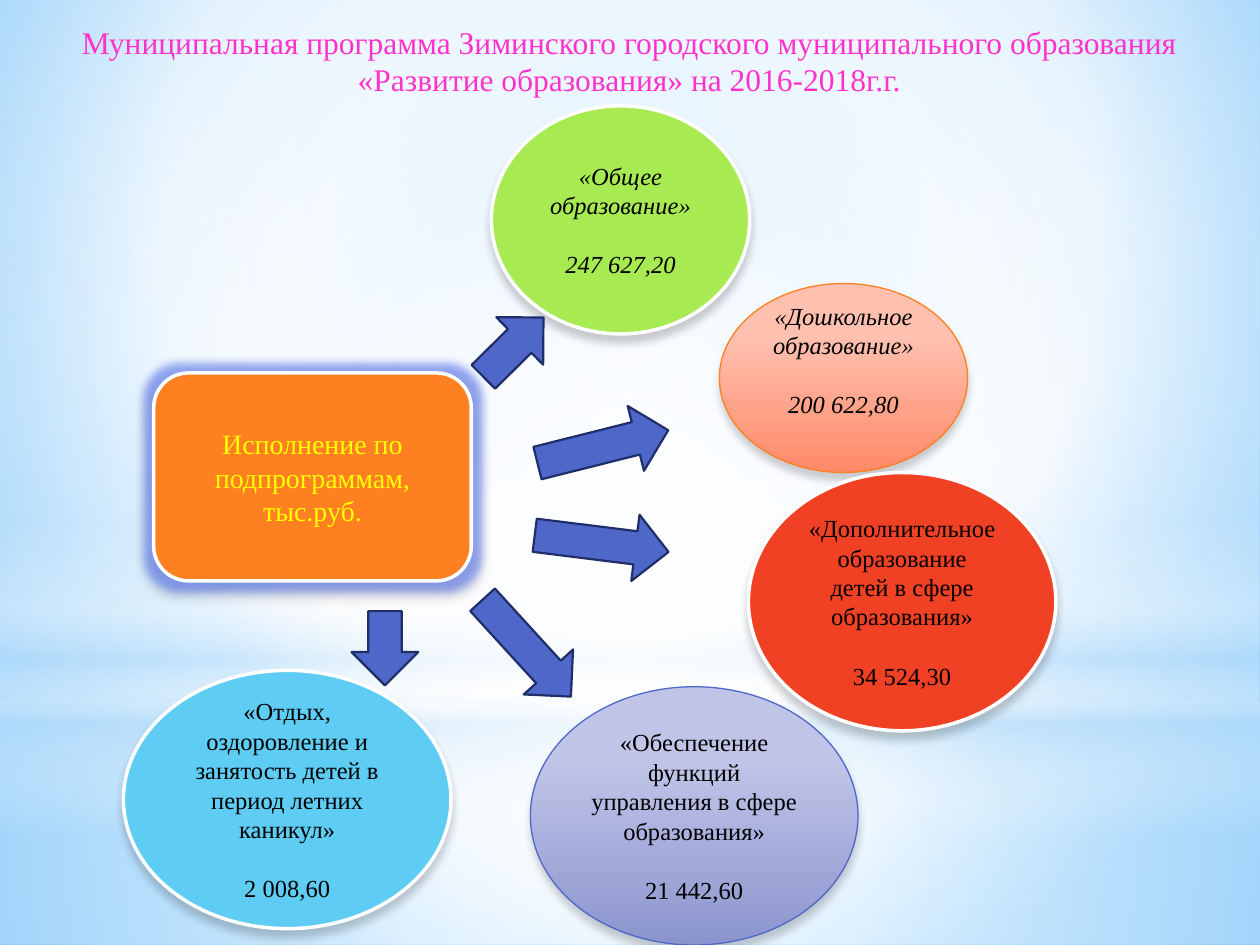
import pptx
import pptx.util
import pptx.dml.color
import pptx.enum.shapes
import pptx.enum.text
import pptx.oxml
import pptx.oxml.ns

Inches, Pt = pptx.util.Inches, pptx.util.Pt
SHAPE = pptx.enum.shapes.MSO_SHAPE
ALIGN = pptx.enum.text.PP_ALIGN
ANCHOR = pptx.enum.text.MSO_ANCHOR
qn = pptx.oxml.ns.qn
NS = pptx.oxml.ns.nsdecls("a")

CENTRE = (50, 50, 50, 50)
BANDS = [  # shape, box, stops, circle centre (None: top to bottom)
    (SHAPE.RECTANGLE, (0, 5.58, 10, 1.92),
     [(0, "FFFFFF", 91), (37, "FFFFFF", 76), (100, "B4DCFA", 79)], CENTRE),
    (SHAPE.RECTANGLE, (0, 0, 10, 5.58),
     [(0, "FFFFFF", 89), (48, "FFFFFF", 62), (100, "B4DCFA", 79)], CENTRE),
    (SHAPE.RECTANGLE, (0, 4.12, 10, 2.5),
     [(0, "FFFFFF", 0), (29, "FFFFFF", 30), (45, "B4DCFA", 40),
      (55, "FFFFFF", 26), (65, "B4DCFA", 60), (100, "FFFFFF", 0)], None),
    (SHAPE.OVAL, (0, 1.75, 10, 5.58),
     [(0, "FFFFFF", 100), (56, "FFFFFF", 0)], CENTRE),
]
PROGRAMMES = [  # box, fill, outline, line width, name, amount, italic, bottom inset
    ((3.9, 0.84, 2.05, 1.81), "A7EA52", "FFFFFF", 2,
     "«Общее образование»", "247 627,20", True, 0.05),
    ((5.71, 2.25, 1.97, 1.5), [(28, "FFC0AF", 100), (100, "FF8968", 100)], "FF8021", 0.75,
     "«Дошкольное образование»", "200 622,80", True, 0.34),
    ((4.21, 5.45, 2.6, 2.05), [(28, "C0C5E8", 100), (100, "8C94CE", 100)], "4E67C8", 0.75,
     "«Обеспечение функций управления в сфере образования»", "21 442,60", False, 0.05),
    ((5.94, 3.75, 2.44, 2.05), "F14124", "FFFFFF", 2,
     "«Дополнительное образование детей в сфере образования»", "34 524,30", False, 0.05),
    ((0.98, 5.32, 2.6, 2.05), "5ECCF3", "FFFFFF", 2,
     "«Отдых, оздоровление и занятость детей в период летних каникул»", "2 008,60", False, 0.05),
]
ARROWS = [  # left, top, width, rotation
    (3.74, 2.49, 0.67, 315.4),
    (4.25, 3.28, 1.07, 345.9),
    (4.24, 4.05, 1.07, 7.1),
    (3.66, 4.88, 1.04, 47.6),
    (2.76, 4.88, 0.59, 90),
]


def rgb(value):
    return pptx.dml.color.RGBColor.from_string(value)


def set_gradient(fill, props, stops, centre=None):
    """Fill with a circular gradient around centre, or a vertical one without it."""
    fill.solid()
    gs = "".join(
        f'<a:gs pos="{pos * 1000}"><a:srgbClr val="{color}">'
        f'<a:alpha val="{alpha * 1000}"/></a:srgbClr></a:gs>'
        for pos, color, alpha in stops)
    if centre:
        sides = " ".join(f'{side}="{v * 1000}"' for side, v in zip("ltrb", centre))
        course = f'<a:path path="circle"><a:fillToRect {sides}/></a:path>'
    else:
        course = '<a:lin ang="5400000" scaled="0"/>'
    grad = pptx.oxml.parse_xml(
        f'<a:gradFill {NS} rotWithShape="1"><a:gsLst>{gs}</a:gsLst>{course}</a:gradFill>')
    props.replace(props.find(qn("a:solidFill")), grad)


def add_shape(slide, kind, box, fill, line=None, width=0, centre=None):
    sp = slide.shapes.add_shape(kind, *map(Inches, box))
    sp.shadow.inherit = False
    if isinstance(fill, str):
        sp.fill.solid()
        sp.fill.fore_color.rgb = rgb(fill)
    else:
        set_gradient(sp.fill, sp._element.spPr, fill, centre)
    if line:
        sp.line.color.rgb = rgb(line)
        sp.line.width = Pt(width)
    else:
        sp.line.fill.background()
    return sp


def add_effects(sp, glow=""):
    """Give a soft shadow below the shape, and a glow if a colour is named."""
    halo = (f'<a:glow rad="{Inches(0.14)}"><a:srgbClr val="{glow}">'
            '<a:alpha val="60000"/></a:srgbClr></a:glow>') if glow else ""
    effects = pptx.oxml.parse_xml(
        f'<a:effectLst {NS}>{halo}<a:outerShdw blurRad="{Pt(5)}" dist="{Pt(4)}" '
        'dir="5400000" rotWithShape="0"><a:srgbClr val="000000">'
        '<a:alpha val="20000"/></a:srgbClr></a:outerShdw></a:effectLst>')
    spPr = sp._element.spPr
    spPr.replace(spPr.find(qn("a:effectLst")), effects)


def write(tf, texts, size, color, italic=False, gap=0):
    """Write centred paragraphs, gap points apart."""
    tf.word_wrap = True
    for i, text in enumerate(texts):
        p = tf.paragraphs[0] if i == 0 else tf.add_paragraph()
        p.alignment = ALIGN.CENTER
        if i:
            p.space_before = Pt(gap)
        r = p.add_run()
        r.text = text
        r.font.color.rgb = rgb(color)
        style = {"name": "Times New Roman", "size": Pt(size), "italic": italic}
        for name, value in style.items():
            setattr(r.font, name, value)


def add_backdrop(slide):
    fill = slide.background.fill
    fill.solid()
    set_gradient(fill, slide._element.find(".//" + qn("p:bgPr")),
                 [(0, "9ED5FF", 100), (60, "FFFFFF", 100), (100, "5BB9FF", 100)],
                 (20, 10, 20, 60))
    for kind, box, stops, centre in BANDS:
        add_shape(slide, kind, box, stops, centre=centre)


def add_title(slide, box):
    tf = slide.shapes.add_textbox(*map(Inches, box)).text_frame
    write(tf, ["Муниципальная программа Зиминского городского муниципального "
               "образования «Развитие образования» на 2016-2018г.г."], 18, "FF33CC")


def add_hub(slide, box):
    sp = add_shape(slide, SHAPE.ROUNDED_RECTANGLE, box, "FF8021", "FFFFFF", 2)
    add_effects(sp, glow="5B78F0")
    sp.text_frame.vertical_anchor = ANCHOR.MIDDLE
    write(sp.text_frame, ["Исполнение по подпрограммам, тыс.руб."], 16, "FFFF00")


def add_programme(slide, box, fill, line, width, name, amount, italic, bottom):
    sp = add_shape(slide, SHAPE.OVAL, box, fill, line, width)
    add_effects(sp)
    tf = sp.text_frame
    tf.vertical_anchor = ANCHOR.MIDDLE
    tf.margin_bottom = Inches(bottom)
    write(tf, [name, amount], 14, "000000", italic, gap=17)


def add_arrow(slide, left, top, width, rotation):
    sp = add_shape(slide, SHAPE.RIGHT_ARROW, (left, top, width, 0.53),
                   "4E67C8", "1F2E69", 1.25)
    sp.rotation = rotation


def main():
    prs = pptx.Presentation()
    prs.slide_width, prs.slide_height = Inches(10), Inches(7.5)
    slide = prs.slides.add_slide(prs.slide_layouts[6])
    add_backdrop(slide)
    add_hub(slide, (1.22, 2.96, 2.52, 1.65))
    for programme in PROGRAMMES:
        add_programme(slide, *programme)
    add_title(slide, (0.35, 0.13, 9.29, 0.71))
    for arrow in ARROWS:
        add_arrow(slide, *arrow)
    prs.save("out.pptx")


if __name__ == "__main__":
    main()
